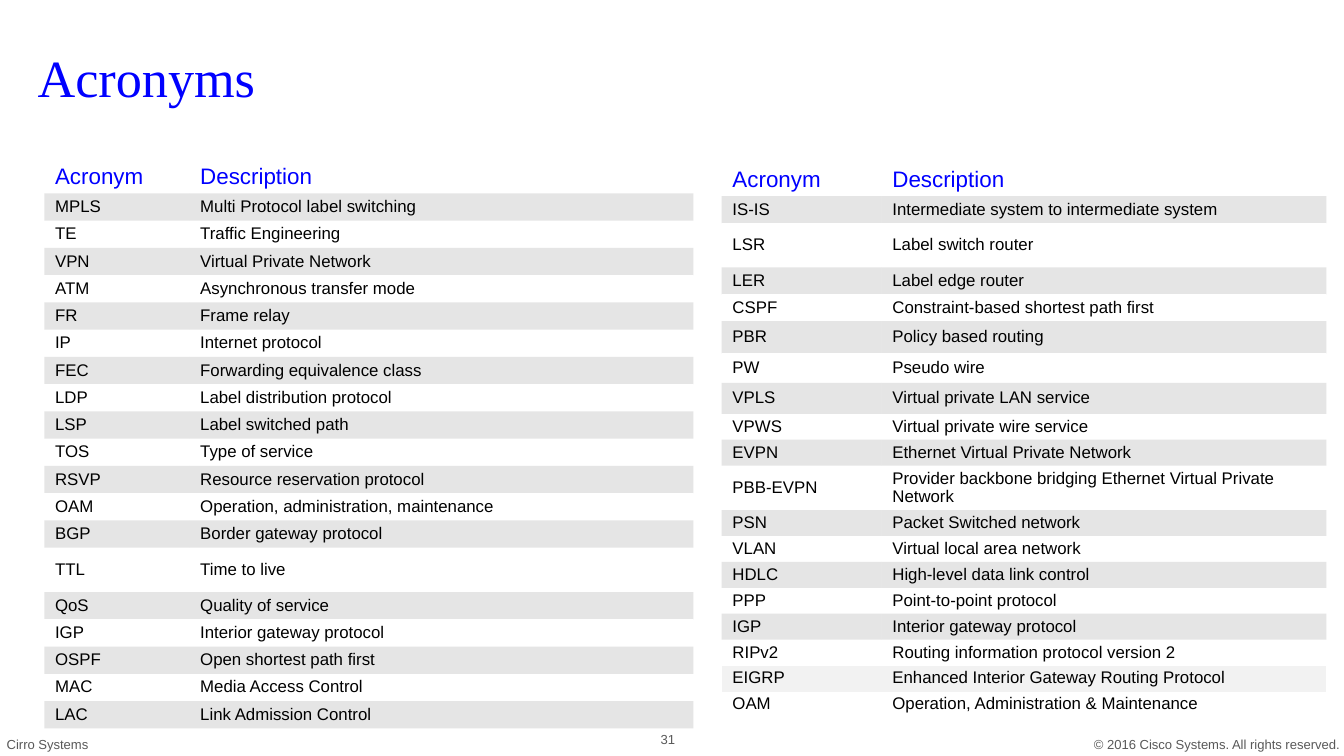
import pptx
import pptx.dml.color
import pptx.enum.text
import pptx.oxml.ns
import pptx.util
from lxml import etree

Inches = pptx.util.Inches
Pt = pptx.util.Pt
PP_ALIGN = pptx.enum.text.PP_ALIGN
MSO_ANCHOR = pptx.enum.text.MSO_ANCHOR
qn = pptx.oxml.ns.qn

COLORS = {
    "blue": "0000FF",
    "black": "000000",
    "white": "FFFFFF",
    "band": "7F7F7F",
    "pale": "F2F2F2",
    "footer": "595959",
}
NO_GRID_STYLE = "{2D5ABB26-0587-4C30-8999-92F81FD0307C}"
HEADER = ("Acronym", "Description")
ROW_FILLS = {"MAC": None, "EIGRP": "pale"}

LEFT_TERMS = [
    ("MPLS", "Multi Protocol label switching"),
    ("TE", "Traffic Engineering"),
    ("VPN", "Virtual Private Network"),
    ("ATM", "Asynchronous transfer mode"),
    ("FR", "Frame relay"),
    ("IP", "Internet protocol"),
    ("FEC", "Forwarding equivalence class"),
    ("LDP", "Label distribution protocol"),
    ("LSP", "Label switched path"),
    ("TOS", "Type of service"),
    ("RSVP", "Resource reservation protocol"),
    ("OAM", "Operation, administration, maintenance"),
    ("BGP", "Border gateway protocol"),
    ("TTL", "Time to live"),
    ("QoS", "Quality of service"),
    ("IGP", "Interior gateway protocol"),
    ("OSPF", "Open shortest path first"),
    ("MAC", "Media Access Control"),
    ("LAC", "Link Admission Control"),
]
RIGHT_TERMS = [
    ("IS-IS", "Intermediate system to intermediate system"),
    ("LSR", "Label switch router"),
    ("LER", "Label edge router"),
    ("CSPF", "Constraint-based shortest path first"),
    ("PBR", "Policy based routing"),
    ("PW", "Pseudo wire"),
    ("VPLS", "Virtual private LAN service"),
    ("VPWS", "Virtual private wire service"),
    ("EVPN", "Ethernet Virtual Private Network"),
    ("PBB-EVPN", "Provider backbone bridging Ethernet Virtual Private Network"),
    ("PSN", "Packet Switched network"),
    ("VLAN", "Virtual local area network"),
    ("HDLC", "High-level data link control"),
    ("PPP", "Point-to-point protocol"),
    ("IGP", "Interior gateway protocol"),
    ("RIPv2", "Routing information protocol version 2"),
    ("EIGRP", "Enhanced Interior Gateway Routing Protocol"),
    ("OAM", "Operation, Administration & Maintenance"),
]
LEFT_HEIGHTS = {"Acronym": 0.24, "TTL": 0.33}
RIGHT_HEIGHTS = {
    "Acronym": 0.24, "IS-IS": 0.2, "LSR": 0.33, "LER": 0.2, "CSPF": 0.2,
    "PBR": 0.24, "PW": 0.22, "VPLS": 0.23, "PBB-EVPN": 0.33,
}


def format_text(p, size, color, font="Arial"):
    for r in p.runs:
        r.font.size = Pt(size)
        r.font.name = font
        r.font.color.rgb = pptx.dml.color.RGBColor.from_string(COLORS[color])


def fill_cell(cell, color):
    if color is None:
        cell.fill.background()
        return
    cell.fill.solid()
    cell.fill.fore_color.rgb = pptx.dml.color.RGBColor.from_string(COLORS[color])
    if color == "band":
        rgb = cell._tc.tcPr.find(".//" + qn("a:srgbClr"))
        etree.SubElement(rgb, qn("a:alpha"), val="20000")


def add_title(slide, text, x, y, w, h):
    sp = slide.shapes.title
    sp.left, sp.top, sp.width, sp.height = map(Inches, (x, y, w, h))
    tf = sp.text_frame
    tf.text = text
    tf.vertical_anchor = MSO_ANCHOR.MIDDLE
    p = tf.paragraphs[0]
    p.alignment = PP_ALIGN.LEFT
    p.line_spacing = 0.9
    format_text(p, 28, "blue", "Times New Roman")


def add_glossary(slide, terms, heights, first_col, x, y, w, h):
    rows = [HEADER] + terms
    common = (h - sum(heights.values())) / (len(rows) - len(heights))
    frame = slide.shapes.add_table(len(rows), 2, *map(Inches, (x, y, w, h)))
    table = frame.table
    table.first_row = table.horz_banding = False
    table._tbl.tblPr.find(qn("a:tableStyleId")).text = NO_GRID_STYLE
    table.columns[0].width = Inches(first_col)
    table.columns[1].width = Inches(w - first_col)
    for i, row in enumerate(rows):
        table.rows[i].height = Inches(heights.get(row[0], common))
        color = ROW_FILLS.get(row[0], "band" if i % 2 else "white")
        for j, text in enumerate(row):
            cell = table.cell(i, j)
            cell.margin_left = cell.margin_right = Inches(0.08)
            cell.margin_top = cell.margin_bottom = Inches(0.02)
            cell.vertical_anchor = MSO_ANCHOR.MIDDLE
            fill_cell(cell, color)
            p = cell.text_frame.paragraphs[0]
            p.text = text
            p.line_spacing = 0.95
            if i == 0:
                format_text(p, 12, "blue")
            else:
                format_text(p, 9, "black")


def add_label(slide, text, x, y, w, h, anchor=MSO_ANCHOR.BOTTOM,
              align=PP_ALIGN.LEFT):
    sp = slide.shapes.add_textbox(*map(Inches, (x, y, w, h)))
    tf = sp.text_frame
    tf.margin_left = tf.margin_right = Inches(0.05)
    tf.margin_top = tf.margin_bottom = Inches(0.03)
    tf.word_wrap = False
    tf.vertical_anchor = anchor
    tf.text = text
    p = tf.paragraphs[0]
    p.alignment = align
    format_text(p, 7, "footer")


def add_footer(slide, x, y, w, h):
    add_label(slide, "© 2016 Cisco Systems. All rights reserved.",
              x + w - 1.91, y, 1.97, h)
    add_label(slide, "Cirro Systems", x, y, 0.75, h)
    add_label(slide, "31", x + 4.76, y - 0.11, 0.42, 0.3,
              MSO_ANCHOR.MIDDLE, PP_ALIGN.CENTER)


def main():
    prs = pptx.Presentation()
    prs.slide_width = Inches(10)
    prs.slide_height = prs.slide_width * 9 // 16
    slide = prs.slides.add_slide(prs.slide_layouts[5])
    add_footer(slide, 0, 5.46, 10, 0.17)
    add_glossary(slide, LEFT_TERMS, LEFT_HEIGHTS, 1.08, 0.33, 1.2, 4.83, 4.22)
    add_glossary(slide, RIGHT_TERMS, RIGHT_HEIGHTS, 1.19, 5.37, 1.22, 4.5, 4.12)
    add_title(slide, "Acronyms", 0.18, 0.18, 9.31, 0.84)
    prs.save("out.pptx")


if __name__ == "__main__":
    main()
